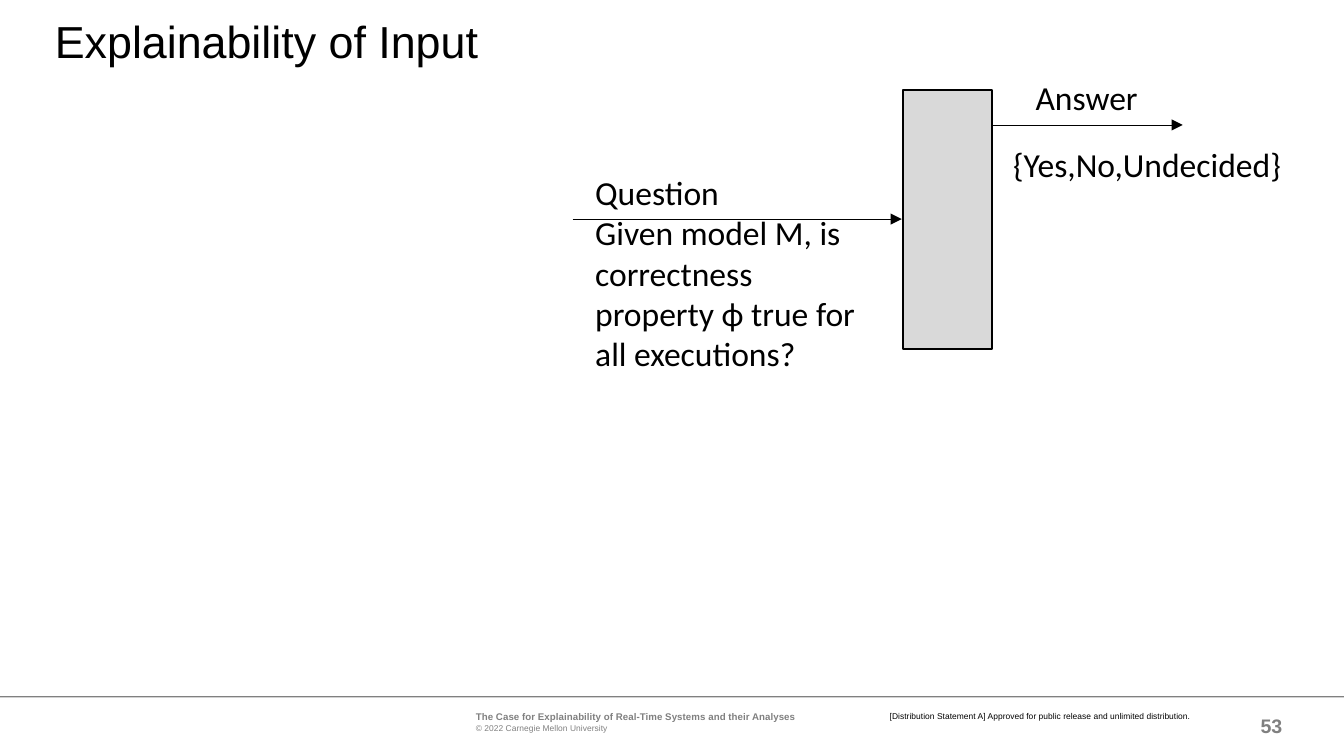
from lxml.etree import SubElement
from pptx import Presentation
from pptx.dml.color import RGBColor
from pptx.enum.shapes import MSO_CONNECTOR, MSO_SHAPE
from pptx.enum.text import MSO_ANCHOR, PP_ALIGN
from pptx.oxml.ns import qn
from pptx.util import Inches, Pt

WIDE = 10
HIGH = WIDE * 9 / 16
BLACK, GRAY, PALE = "000000", "808080", "D9D9D9"
LEFT, MID, RIGHT = PP_ALIGN.LEFT, PP_ALIGN.CENTER, PP_ALIGN.RIGHT
PAD = (0.1, 0.05, 0.1, 0.05)
FLUSH = (0, 0, 0, 0)

# Each text: place, insets, alignment, font, colour, lines of (text, size, bold)
TEXTS = [
    ((9.1, 5.25, 0.44, 0.3), FLUSH, RIGHT, "Arial", GRAY, [("53", 10.5, True)]),
    ((3.54, 5.29, 2.92, 0.16), (0, 0, 0.04, 0), LEFT, "Arial", GRAY, [
        ("The Case for Explainability of Real-Time Systems and their Analyses", 5.25, True),
        ("© 2022 Carnegie Mellon University", 4.5, False)]),
    ((6.62, 5.29, 2.29, 0.08), FLUSH, LEFT, "Arial", BLACK, [
        ("[Distribution Statement A] Approved for public release and unlimited distribution.",
         4.5, False)]),
    ((0.31, 0.1, 9.25, 0.46), PAD, LEFT, "Arial", BLACK,
     [("Explainability of Input", 24, False)]),
    ((4.33, 1.23, 2.31, 1.62), PAD, LEFT, "Calibri", BLACK, [
        ("Question", 18, False),
        ("Given model M, is correctness property ϕ true for all executions?", 18, False)]),
    ((7.38, 0.52, 1.41, 0.4), PAD, MID, "Calibri", BLACK, [("Answer", 18, False)]),
    ((7.38, 1.02, 2.31, 0.4), PAD, MID, "Calibri", BLACK,
     [("{Yes,No,Undecided}", 18, False)]),
]
# Place, fill, outline width
RECTS = [((0, 5.18, WIDE, 0.01), GRAY, 0), ((6.72, 0.67, 0.66, 1.93), PALE, 1)]
# Start x, end x, height on the slide
ARROWS = [(7.38, 8.8, 0.93), (4.26, 6.71, 1.63)]


def color(code):
    return RGBColor.from_string(code)


def add_text(slide, place, pads, align, face, tint, lines):
    frame = slide.shapes.add_textbox(*map(Inches, place)).text_frame
    frame.word_wrap = True
    (frame.margin_left, frame.margin_top,
     frame.margin_right, frame.margin_bottom) = map(Inches, pads)
    for i, (text, size, bold) in enumerate(lines):
        para = frame.paragraphs[0] if i == 0 else frame.add_paragraph()
        para.text = text
        para.alignment = align
        font = para.font
        font.name, font.size, font.bold = face, Pt(size), bold
        font.color.rgb = color(tint)
    return frame


def add_rect(slide, place, fill, width):
    rect = slide.shapes.add_shape(MSO_SHAPE.RECTANGLE, *map(Inches, place))
    rect.shadow.inherit = False
    rect.fill.solid()
    rect.fill.fore_color.rgb = color(fill)
    if width:
        rect.line.color.rgb = color(BLACK)
        rect.line.width = Pt(width)
    else:
        rect.line.fill.background()


def add_arrow(slide, start, end, y):
    arrow = slide.shapes.add_connector(
        MSO_CONNECTOR.STRAIGHT, *map(Inches, (start, y, end, y)))
    arrow.line.color.rgb = color(BLACK)
    arrow.line.width = Pt(0.5)
    SubElement(arrow.line._get_or_add_ln(), qn("a:tailEnd"), type="triangle")
    SubElement(arrow._element.spPr, qn("a:effectLst"))


def main():
    deck = Presentation()
    deck.slide_width, deck.slide_height = Inches(WIDE), Inches(HIGH)
    slide = deck.slides.add_slide(deck.slide_layouts[6])

    # Footer rule and the analysis box
    for rect in RECTS:
        add_rect(slide, *rect)
    # Question going in, answer coming out
    for arrow in ARROWS:
        add_arrow(slide, *arrow)
    # Footer, title and labels
    frames = [add_text(slide, *text) for text in TEXTS]
    number, title = frames[0], frames[3]
    number.vertical_anchor = MSO_ANCHOR.MIDDLE
    title.paragraphs[0].line_spacing = 0.9

    deck.save("out.pptx")


if __name__ == "__main__":
    main()
